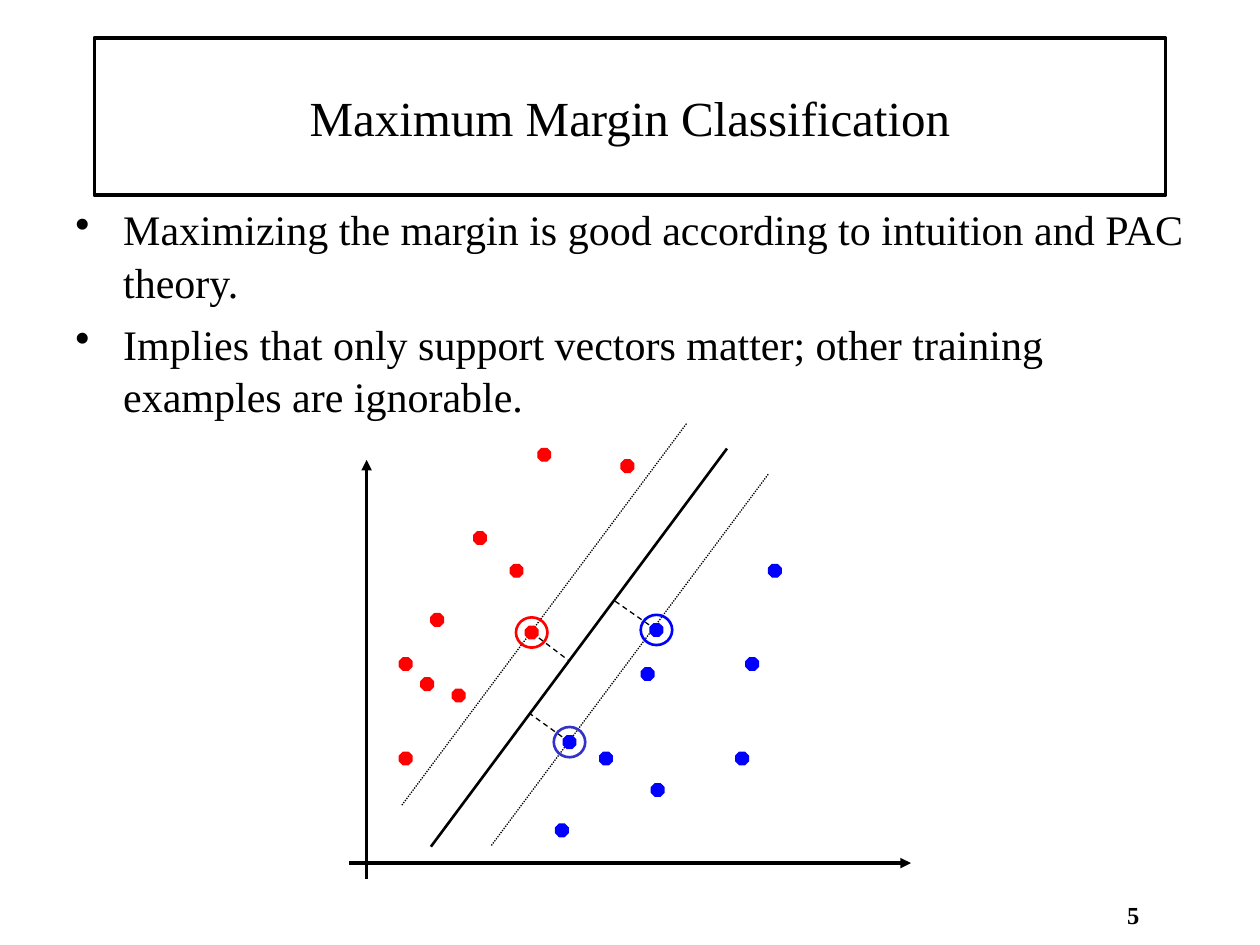
from dataclasses import dataclass

from lxml.etree import SubElement
from pptx import Presentation
from pptx.dml.color import RGBColor
from pptx.enum.dml import MSO_LINE
from pptx.enum.shapes import MSO_CONNECTOR, MSO_SHAPE
from pptx.enum.text import MSO_ANCHOR, PP_ALIGN
from pptx.oxml.ns import qn
from pptx.util import Inches, Pt


@dataclass(frozen=True)
class Theme:
    """Colours, font and type sizes of the slide."""
    ink: RGBColor = RGBColor(0, 0, 0)
    paper: RGBColor = RGBColor(255, 255, 255)
    red: RGBColor = RGBColor(255, 0, 0)
    blue: RGBColor = RGBColor(0, 0, 255)
    indigo: RGBColor = RGBColor(0x33, 0x33, 0xCC)
    font: str = "Times New Roman"
    title: int = 28
    body: int = 24
    number: int = 14


class SlideBuilder:
    """Draws styled elements on one slide."""

    def __init__(self, slide, theme):
        """Keep the slide and its theme."""
        self.shapes = slide.shapes
        self.theme = theme

    def style(self, paragraph, size, align, bold=False):
        """Set font and alignment of a paragraph."""
        paragraph.alignment = align
        font = paragraph.font
        font.name, font.size, font.bold = self.theme.font, Pt(size), bold
        font.color.rgb = self.theme.ink

    def label(self, text, box, size, bold=False, border=None, margin=0.1):
        """Add one centred line of text, with a border if a width is given."""
        label = self.shapes.add_textbox(*map(Inches, box))
        if border:
            label.line.color.rgb = self.theme.ink
            label.line.width = Pt(border)
        frame = label.text_frame
        frame.word_wrap = True
        frame.margin_left = frame.margin_right = Inches(margin)
        frame.margin_top = frame.margin_bottom = Inches(margin / 2)
        frame.vertical_anchor = MSO_ANCHOR.MIDDLE if border else MSO_ANCHOR.TOP
        frame.text = text
        self.style(frame.paragraphs[0], size, PP_ALIGN.CENTER, bold)
        return label

    def bullets(self, points, box):
        """Add a bulleted list with hanging indents."""
        frame = self.shapes.add_textbox(*map(Inches, box)).text_frame
        frame.word_wrap = True
        frame.text = "\n".join(points)
        for paragraph in frame.paragraphs:
            self.style(paragraph, self.theme.body, PP_ALIGN.LEFT)
            paragraph.line_spacing = 1.05
            paragraph.space_before = Pt(0.2 * self.theme.body)
            properties = paragraph._p.get_or_add_pPr()
            properties.set("marL", str(Inches(0.38)))
            properties.set("indent", str(-Inches(0.38)))
            bullet = SubElement(properties, qn("a:buChar"))
            bullet.set("char", "•")
            properties.insert_element_before(bullet, "a:tabLst", "a:defRPr")

    def line(self, start, end, width, dash=None, arrow=False):
        """Add a straight line, dashed or with an arrowhead on request."""
        line = self.shapes.add_connector(
            MSO_CONNECTOR.STRAIGHT, *map(Inches, (*start, *end)))
        line.line.color.rgb = self.theme.ink
        line.line.width = Pt(width)
        if dash:
            line.line.dash_style = dash
        if arrow:
            SubElement(line.line._ln, qn("a:tailEnd")).set("type", "triangle")
        SubElement(line._element.spPr, qn("a:effectLst"))

    def mark(self, kind, center, size, color, width, filled):
        """Add a shape around a centre point."""
        (x, y), (w, h) = center, size
        mark = self.shapes.add_shape(
            kind, *map(Inches, (x - w / 2, y - h / 2, w, h)))
        mark.shadow.inherit = False
        mark.line.color.rgb = color
        mark.line.width = Pt(width)
        if filled:
            mark.fill.solid()
            mark.fill.fore_color.rgb = color
        else:
            mark.fill.background()

    def example(self, center, color):
        """Add the dot of one training example."""
        self.mark(MSO_SHAPE.OCTAGON, center, (0.1, 0.1), color, 0.75, True)

    def ring(self, center, color):
        """Circle a support vector."""
        self.mark(MSO_SHAPE.OVAL, center, (0.25, 0.24), color, 1.5, False)


RED_EXAMPLES = [(4.1, 4.53), (3.47, 4.92), (3.64, 5.52), (3.22, 6.02),
                (3.81, 4.27), (3.22, 5.27), (3.39, 5.43), (4.32, 3.61),
                (4.98, 3.7)]
BLUE_EXAMPLES = [(4.81, 6.02), (5.89, 6.02), (4.46, 6.59), (5.14, 5.35),
                 (5.22, 6.27), (5.97, 5.27), (6.15, 4.53)]


def main():
    """Build and save the slide."""
    theme = Theme()
    deck = Presentation()
    deck.slide_width, deck.slide_height = Inches(10), Inches(7.5)
    slide = SlideBuilder(deck.slides.add_slide(deck.slide_layouts[6]), theme)

    number = slide.label("5", (8.83, 7.14, 0.33, 0.36), theme.number,
                         bold=True, margin=0)
    number.fill.solid()
    number.fill.fore_color.rgb = theme.paper
    slide.label("Maximum Margin Classification", (0.75, 0.3, 8.5, 1.25),
                theme.title, border=2)
    slide.bullets([
        "Maximizing the margin is good according to intuition and PAC theory.",
        "Implies that only support vectors matter; other training examples "
        "are ignorable.",
    ], (0.5, 1.55, 9, 5.5))

    slide.line((2.91, 6.98), (2.91, 3.65), 2, arrow=True)
    slide.line((2.77, 6.85), (7.23, 6.85), 2, arrow=True)

    for examples, color in ((RED_EXAMPLES, theme.red),
                            (BLUE_EXAMPLES, theme.blue)):
        for center in examples:
            slide.example(center, color)

    slide.line((3.42, 6.72), (5.77, 3.56), 1.5)
    for start, end in (((3.9, 6.71), (6.1, 3.76)), ((3.19, 6.39), (5.45, 3.36))):
        slide.line(start, end, 0.75, MSO_LINE.ROUND_DOT)

    support_vectors = [
        ((4.22, 5.02), (4.51, 5.24), theme.red, theme.red),
        ((4.52, 5.89), (4.2, 5.66), theme.blue, theme.indigo),
        ((5.21, 5.0), (4.88, 4.77), theme.blue, theme.blue),
    ]
    for center, boundary_point, dot_color, ring_color in support_vectors:
        slide.line(center, boundary_point, 0.75, MSO_LINE.DASH)
        slide.example(center, dot_color)
        slide.ring(center, ring_color)

    deck.save("out.pptx")


main()
